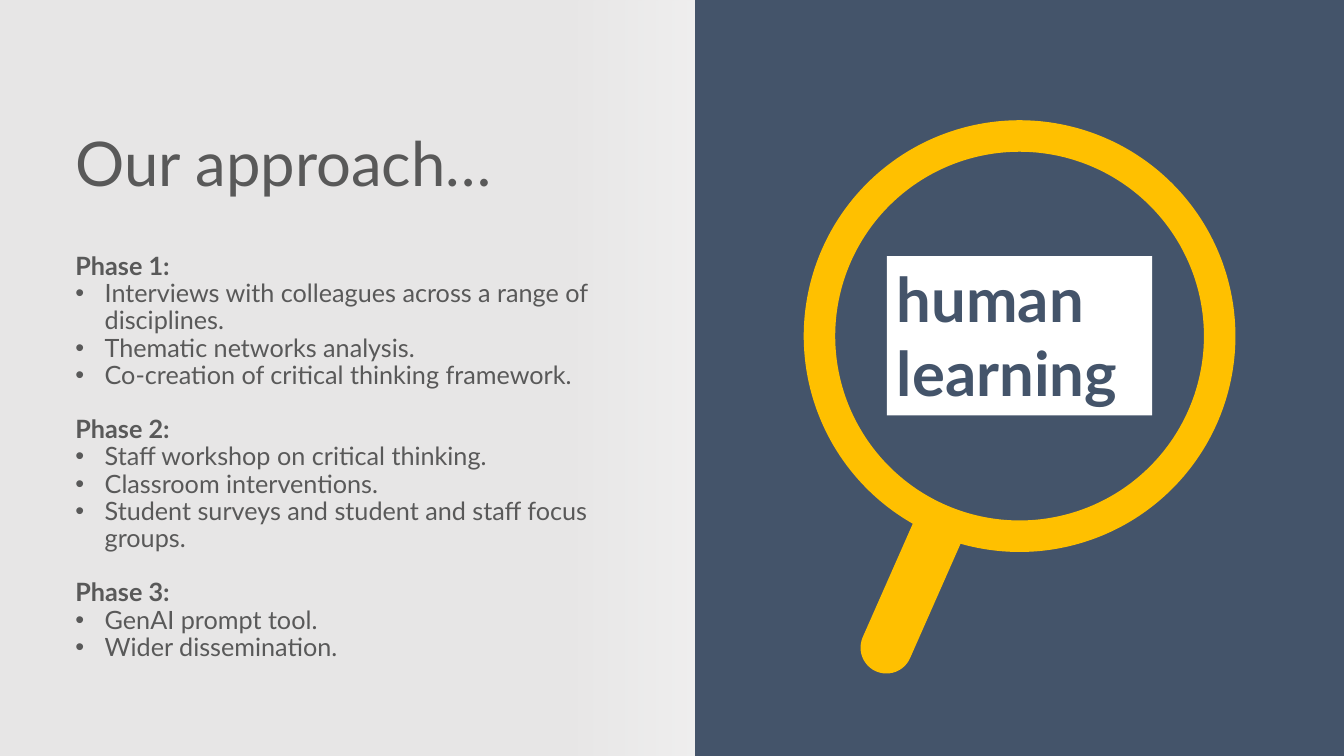
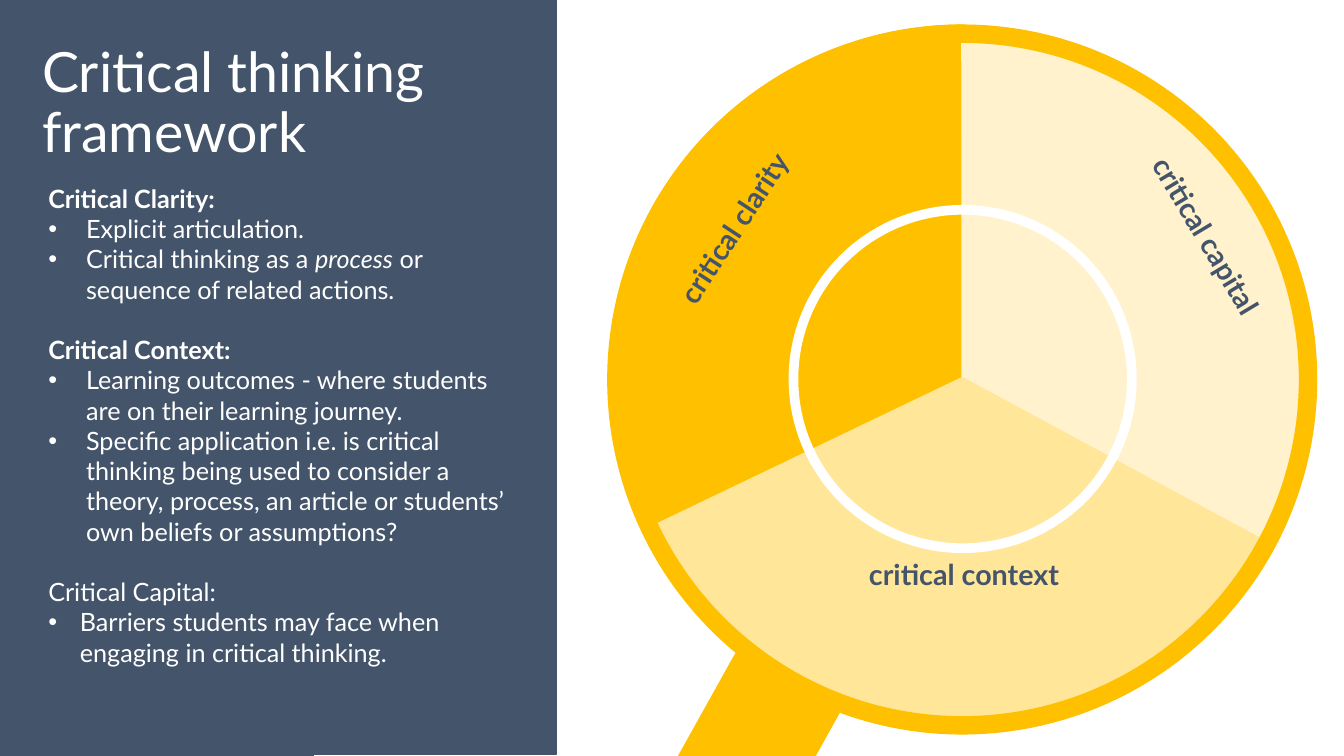
from dataclasses import dataclass

from lxml import etree
from pptx import Presentation
from pptx.dml.color import RGBColor
from pptx.enum import shapes, text
from pptx.oxml.ns import qn
from pptx.util import Pt

# Shared look
FONT = "Lato"
NAVY = RGBColor(0x44, 0x54, 0x6A)
GOLD = RGBColor(0xFF, 0xC0, 0x00)
GOLD_MID = RGBColor(0xFF, 0xE6, 0x99)
GOLD_PALE = RGBColor(0xFF, 0xF2, 0xCC)
WHITE = RGBColor(0xFF, 0xFF, 0xFF)
GREY = RGBColor(0xE7, 0xE6, 0xE6)
INK = RGBColor(0x59, 0x59, 0x59)
WIDTH, HEIGHT = 960, 540
BODY_SIZE = 18
MSO = shapes.MSO_SHAPE
TOP, MIDDLE = text.MSO_ANCHOR.TOP, text.MSO_ANCHOR.MIDDLE
LEFT, CENTER = text.PP_ALIGN.LEFT, text.PP_ALIGN.CENTER


@dataclass(frozen=True)
class Box:
    x: float
    y: float
    w: float
    h: float


@dataclass(frozen=True)
class Section:
    heading: str
    bullets: tuple  # a bullet is a string, or (before, italic, after)
    indent: float
    bold: bool = True


@dataclass(frozen=True)
class Sector:
    label: str
    color: RGBColor
    pie: Box
    turn: float
    label_box: Box
    label_turn: float = 0


# Drawing helpers
def add_shape(slide, kind, box: Box, color=None, outline=True, turn=0.0, adj=()):
    sp = slide.shapes.add_shape(kind, Pt(box.x), Pt(box.y), Pt(box.w), Pt(box.h))
    sp.shadow.inherit = False
    sp.rotation = turn
    for i, value in enumerate(adj):
        sp.adjustments[i] = value
    if color is not None:
        sp.fill.solid()
        sp.fill.fore_color.rgb = color
    if outline:
        sp.line.color.rgb = color
        sp.line.width = Pt(1)
    else:
        sp.line.fill.background()
    return sp


def add_run(p, words: str, size: float, color, bold=False, italic=False):
    r = p.add_run()
    r.text = words
    f = r.font
    f.name, f.size, f.bold, f.italic = FONT, Pt(size), bold, italic
    f.color.rgb = color


def add_frame(slide, box: Box, anchor=TOP, turn=0.0):
    sp = slide.shapes.add_textbox(Pt(box.x), Pt(box.y), Pt(box.w), Pt(box.h))
    sp.rotation = turn
    tf = sp.text_frame
    tf.word_wrap = True
    tf.vertical_anchor = anchor
    return tf


def write_lines(tf, *lines: str, size=BODY_SIZE, color=NAVY, bold=False,
                align=LEFT, spacing=1.0):
    for i, line in enumerate(lines):
        p = tf.add_paragraph() if i else tf.paragraphs[0]
        p.alignment = align
        p.line_spacing = spacing
        add_run(p, line, size, color, bold)


def add_title(slide, words: str, box: Box, size: float, color):
    write_lines(add_frame(slide, box, MIDDLE), words, size=size, color=color, spacing=0.9)


def set_bullet(p, indent: float):
    pPr = p._p.get_or_add_pPr()
    pPr.set("marL", str(Pt(indent)))
    pPr.set("indent", str(-Pt(indent)))
    etree.SubElement(pPr, qn("a:buFont")).set("typeface", "Arial")
    etree.SubElement(pPr, qn("a:buChar")).set("char", "•")


def add_sections(slide, sections, box: Box, color, anchor=TOP, spacing=1.0):
    tf = add_frame(slide, box, anchor)
    for i, section in enumerate(sections):
        p = tf.add_paragraph() if i else tf.paragraphs[0]
        p.line_spacing = spacing
        if i:
            p.space_before = Pt(BODY_SIZE * 1.2 * spacing)
        add_run(p, section.heading, BODY_SIZE, color, section.bold)
        for bullet in section.bullets:
            p = tf.add_paragraph()
            set_bullet(p, section.indent)
            p.line_spacing = spacing
            parts = (bullet,) if isinstance(bullet, str) else bullet
            for n, part in enumerate(parts):
                add_run(p, part, BODY_SIZE, color, italic=n == 1)


def fade_in(sp, color, stops):
    """Fill from left to right with (position, opacity) stops in percent."""
    sp.fill.gradient()
    sp.fill.gradient_angle = 0
    gs_list = sp._element.spPr.find(qn("a:gradFill")).find(qn("a:gsLst"))
    for gs in list(gs_list):
        gs_list.remove(gs)
    for position, opacity in stops:
        gs = etree.SubElement(gs_list, qn("a:gs"), pos=str(position * 1000))
        clr = etree.SubElement(gs, qn("a:srgbClr"), val=str(color))
        etree.SubElement(clr, qn("a:alpha"), val=str(opacity * 1000))


def new_slide(prs, color):
    slide = prs.slides.add_slide(prs.slide_layouts[6])
    slide.background.fill.solid()
    slide.background.fill.fore_color.rgb = color
    return slide


# Content
PHASES = (
    Section("Phase 1:", ("Interviews with colleagues across a range of disciplines.",
                         "Thematic networks analysis.",
                         "Co-creation of critical thinking framework."), 20.9),
    Section("Phase 2:", ("Staff workshop on critical thinking.",
                         "Classroom interventions.",
                         "Student surveys and student and staff focus groups."), 20.9),
    Section("Phase 3:", ("GenAI prompt tool.", "Wider dissemination."), 20.9),
)
FRAMEWORK = (
    Section("Critical Clarity:", (
        "Explicit articulation.",
        ("Critical thinking as a ", "process", " or sequence of related actions.")), 27),
    Section("Critical Context:", (
        "Learning outcomes - where students are on their learning journey.",
        "Specific application i.e. is critical thinking being used to consider "
        "a theory, process, an article or students’ own beliefs or assumptions?"), 27),
    Section("Critical Capital:", (
        "Barriers students may face when engaging in critical thinking.",), 22.5, bold=False),
)
LENS = Box(434.2, 18, 506.2, 506.2)
SECTORS = (
    Sector("critical clarity", GOLD, Box(434.9, 18, 506.2, 506.2), 0,
           Box(424.8, 132.5, 255.6, 97.9), 303.1),
    Sector("critical capital", GOLD_PALE, LENS, 126,
           Box(692.6, 130.3, 255.6, 125.3), 59.1),
    Sector("critical context", GOLD_MID, Box(434.2, 16.6, 506.2, 506.2), 244.4,
           Box(560.9, 395.3, 255.6, 97.9)),
)


def build_approach(prs):
    slide = new_slide(prs, GREY)
    glow = add_shape(slide, MSO.RECTANGLE, Box(403.2, 0, 556.8, HEIGHT), outline=False)
    fade_in(glow, WHITE, ((0, 0), (19, 38), (35, 77), (48, 100), (100, 100)))
    add_title(slide, "Our approach…", Box(46.8, 67, 433.4, 104.4), 44, INK)
    add_sections(slide, PHASES, Box(46.8, 180, 433.4, 293.8), INK, MIDDLE, 0.9)

    # Magnifying glass on the navy half
    add_shape(slide, MSO.RECTANGLE, Box(496.8, 0, 463.2, HEIGHT), NAVY)
    sp = add_shape(slide, MSO.RECTANGLE, Box(633.6, 182.9, 189.4, 113.8), WHITE, outline=False)
    sp.text_frame.vertical_anchor = TOP
    write_lines(sp.text_frame, "human", "learning", size=44, bold=True)
    add_shape(slide, MSO.DONUT, Box(574.6, 86.4, 307.4, 307.4), GOLD, adj=(0.07,))
    add_shape(slide, MSO.ROUNDED_RECTANGLE, Box(633.6, 357.1, 36, 127.4), GOLD,
              turn=23.8, adj=(0.5,))


def build_framework(prs):
    slide = new_slide(prs, NAVY)
    add_shape(slide, MSO.RECTANGLE, Box(224.6, 0, WIDTH - 224.6, HEIGHT), WHITE)

    # Magnifying glass with three sectors
    add_shape(slide, MSO.ROUNDED_RECTANGLE, Box(495.4, 472.3, 85, 119.5), GOLD,
              turn=29.1, adj=(0.12,))
    for sector in SECTORS:
        add_shape(slide, MSO.PIE, sector.pie, sector.color, turn=sector.turn,
                  adj=(86.37, 162))
    for ring, color in ((LENS, GOLD), (Box(563.8, 146.9, 247.7, 247.7), WHITE)):
        add_shape(slide, MSO.DONUT, ring, color, adj=(0.024,))
    for sector in SECTORS:
        tf = add_frame(slide, sector.label_box, turn=sector.label_turn)
        tf.margin_top = tf.margin_bottom = Pt(2.2)
        write_lines(tf, sector.label, size=20.5, bold=True, align=CENTER)

    # Text panel
    add_shape(slide, MSO.RECTANGLE, Box(0, 0, 397.4, 538.5), NAVY)
    add_title(slide, "Critical thinking framework", Box(23, 22.3, 303.1, 104.4), 39.6, WHITE)
    add_sections(slide, FRAMEWORK, Box(27.4, 127.4, 356.4, 378), WHITE)


def main():
    prs = Presentation()
    prs.slide_width, prs.slide_height = Pt(WIDTH), Pt(HEIGHT)
    build_approach(prs)
    build_framework(prs)
    prs.save("out.pptx")


if __name__ == "__main__":
    main()
